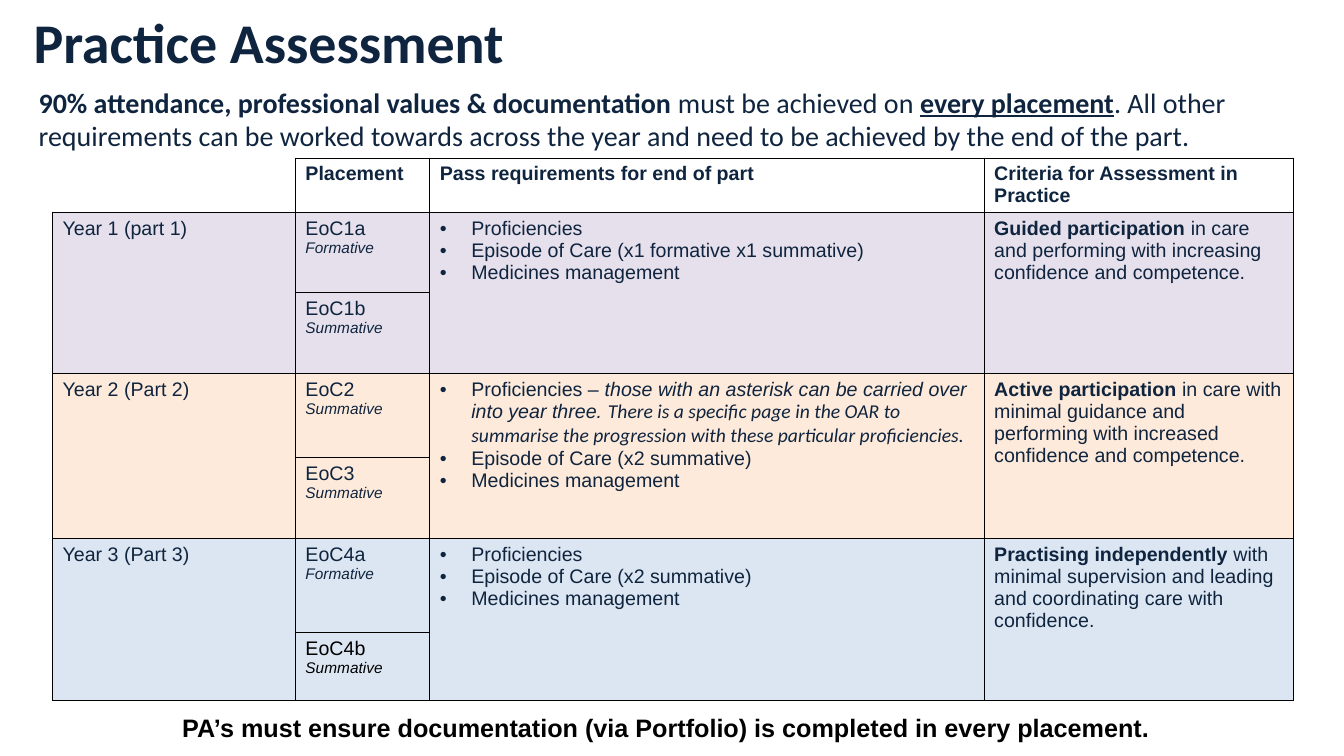
from lxml import etree
from pptx import Presentation
from pptx import util as u
from pptx.dml.color import RGBColor
from pptx.enum import text as t
from pptx.oxml import ns

COLORS = {"navy": "0F243E", "black": "000000", "white": "FFFFFF",
          "lilac": "E6E0EC", "peach": "FDEADA", "sky": "DCE6F2"}
COLUMNS = [173.5, 96, 396, 221]
ROWS = [38.5, 57.5, 57.5, 60.5, 57.5, 67, 49]
HEADINGS = ["Placement", "Pass requirements for end of part",
            "Criteria for Assessment in Practice"]
ITALIC = {"italic": True}
BOLD = {"bold": True}
YEARS = [
    ("Year 1 (part 1)", "lilac",
     [("EoC1a", "Formative", "navy"), ("EoC1b", "Summative", "navy")],
     [["Proficiencies"], ["Episode of Care (x1 formative x1 summative)"],
      ["Medicines management"]],
     "Guided participation ",
     "in care and performing with increasing confidence and competence."),
    ("Year 2 (Part 2)", "peach",
     [("EoC2", "Summative", "navy"), ("EoC3", "Summative", "navy")],
     [["Proficiencies – ",
       ("those with an asterisk can be carried over into year three. ", ITALIC),
       ("There is a specific page in the OAR to summarise the progression "
        "with these particular proficiencies.", {"italic": True, "face": "Calibri"})],
      ["Episode of Care (x2 summative)"], ["Medicines management"]],
     "Active participation ",
     "in care with minimal guidance and performing with increased "
     "confidence and competence."),
    ("Year 3 (Part 3)", "sky",
     [("EoC4a", "Formative", "navy"), ("EoC4b", "Summative", "black")],
     [["Proficiencies"], ["Episode of Care (x2 summative)"],
      ["Medicines management"]],
     "Practising independently ",
     "with minimal supervision and leading and coordinating care with confidence."),
]


def write(frame, paragraphs, bullet=False, align=t.PP_ALIGN.LEFT, **base):
    """Fill a text frame with paragraphs made of strings or (string, format) runs."""
    for number, pieces in enumerate(paragraphs):
        paragraph = frame.add_paragraph() if number else frame.paragraphs[0]
        paragraph.alignment = align
        if bullet:
            properties = paragraph._p.get_or_add_pPr()
            properties.set("marL", str(u.Pt(22.5)))
            properties.set("indent", str(-u.Pt(22.5)))
            etree.SubElement(properties, ns.qn("a:buFont"), typeface="Arial")
            etree.SubElement(properties, ns.qn("a:buChar"), char="•")
        for piece in pieces:
            words, extra = (piece, {}) if isinstance(piece, str) else piece
            look = {"size": 14, "face": "Arial", "color": "navy", **base, **extra}
            run = paragraph.add_run()
            run.text = words
            run.font.size = u.Pt(look["size"])
            run.font.name = look["face"]
            run.font.color.rgb = RGBColor.from_string(COLORS[look["color"]])
            run.font.bold = look.get("bold", False)
            run.font.italic = look.get("italic", False)
            run.font.underline = look.get("underline", False)


class AssessmentSlide:
    """Holds the slide and draws its text boxes and table."""

    def __init__(self, deck):
        self.slide = deck.slides.add_slide(deck.slide_layouts[6])

    def box(self, place, paragraphs, fill=None, **look):
        area = self.slide.shapes.add_textbox(*map(u.Pt, place))
        if fill:
            area.fill.solid()
            area.fill.fore_color.rgb = RGBColor.from_string(COLORS[fill])
        area.text_frame.word_wrap = True
        write(area.text_frame, paragraphs, **look)
        return area.text_frame

    def table(self, left, top, columns, rows):
        grid = self.slide.shapes.add_table(
            len(rows), len(columns), u.Pt(left), u.Pt(top),
            u.Pt(sum(columns)), u.Pt(sum(rows))).table
        grid.first_row = grid.horz_banding = False
        for column, width in zip(grid.columns, columns):
            column.width = u.Pt(width)
        for row, height in zip(grid.rows, rows):
            row.height = u.Pt(height)
        return grid

    def cell(self, cell, paragraphs, fill, sides="LRTB", **look):
        properties = cell._tc.get_or_add_tcPr()
        for side in sides:
            border = etree.SubElement(properties, ns.qn("a:ln" + side), w=str(u.Pt(1)))
            paint = etree.SubElement(border, ns.qn("a:solidFill"))
            etree.SubElement(paint, ns.qn("a:srgbClr"), val=COLORS["black"])
        cell.fill.solid()
        cell.fill.fore_color.rgb = RGBColor.from_string(COLORS[fill])
        write(cell.text_frame, paragraphs, **look)


def main():
    deck = Presentation()
    deck.slide_width, deck.slide_height = u.Pt(960), u.Pt(540)
    page = AssessmentSlide(deck)

    title = page.box((15, 5.5, 834, 51), [["Practice Assessment"]], fill="white",
                     size=40, face="Calibri", bold=True)
    title.margin_left = u.Pt(9)
    title.margin_top = title.margin_right = title.margin_bottom = 0
    title.vertical_anchor = t.MSO_ANCHOR.TOP

    grid = page.table(37.5, 113, COLUMNS, ROWS)
    page.cell(grid.cell(0, 0), [], "white", sides="RB")
    for column, heading in enumerate(HEADINGS, 1):
        header = grid.cell(0, column)
        page.cell(header, [[heading]], "white", bold=True)
        header.margin_top, header.margin_bottom = u.Pt(3), u.Pt(2)
    for index, (year, tint, placements, passes, level, criteria) in enumerate(YEARS):
        top = 1 + 2 * index
        for offset, (code, stage, ink) in enumerate(placements):
            page.cell(grid.cell(top + offset, 1),
                      [[code], [(stage, {"size": 11, "italic": True})]],
                      tint, color=ink)
        for column, paragraphs in ((0, [[year]]), (2, passes),
                                   (3, [[(level, BOLD), criteria]])):
            page.cell(grid.cell(top, column), paragraphs, tint, bullet=column == 2)
            page.cell(grid.cell(top + 1, column), [], tint)
            grid.cell(top, column).merge(grid.cell(top + 1, column))

    page.box((20.5, 57.25, 929.5, 55.5), [[
        ("90% attendance, professional values & documentation ", BOLD),
        "must be achieved on ",
        ("every placement", {"bold": True, "underline": True}),
        ". All other requirements can be worked towards across the year and "
        "need to be achieved by the end of the part."]], size=20, face="Calibri")
    page.box((37.5, 505.5, 881.5, 29), [[
        "PA’s must ensure documentation (via Portfolio) is completed in every placement. "]],
        align=t.PP_ALIGN.CENTER, size=18, color="black", bold=True)
    deck.save("out.pptx")


if __name__ == "__main__":
    main()
